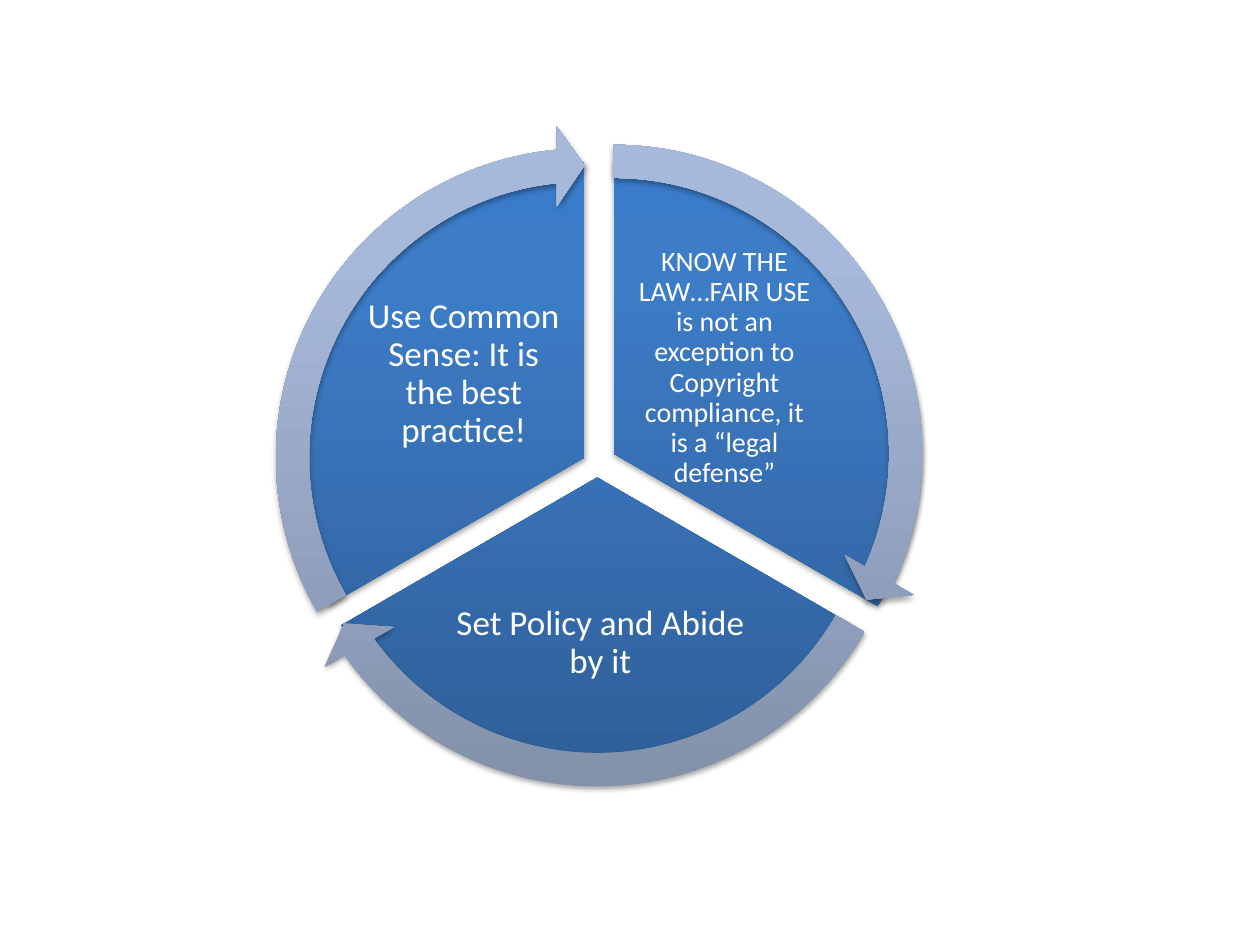
from lxml import etree
from pptx import Presentation
from pptx.dml.color import RGBColor
from pptx.enum.shapes import MSO_SHAPE
from pptx.enum.text import MSO_ANCHOR, PP_ALIGN
from pptx.oxml import parse_xml
from pptx.oxml.ns import nsdecls, qn
from pptx.util import Inches, Pt

PIE, ARROW = MSO_SHAPE.PIE, MSO_SHAPE.CIRCULAR_ARROW
MIDDLE, CENTER = MSO_ANCHOR.MIDDLE, PP_ALIGN.CENTER

COLORS = {
    "text": "FFFFFF",
    "shadow": "000000",
    "pie_dark": "2F5F99", "pie_mid": "3D7CC7", "pie_light": "3A7CCB",
    "arrow_dark": "818FA8", "arrow_mid": "A7B9DA", "arrow_light": "A7BADC",
}
STOPS = {"dark": 0, "mid": 80, "light": 100}
PIE_SIZE, ARROW_SIZE = 4.69, 5.27
ARROW_THICKNESS, ARROW_HEAD_ANGLE, ARROW_HEAD_WIDTH = 0.05, 3.28, 0.06

SECTORS = [
    {"text": "KNOW THE LAW…FAIR USE\vis not an exception to Copyright compliance, it\vis a “legal defense”",
     "size": 16, "inset": 0.02, "box": (5, 2.22, 1.5, 1.4),
     "center": (4.87, 3.6), "pie_width": 4.89,
     "pie_angles": (162, 18), "arrow_angles": (14.73, 161.99)},
    {"text": "Set Policy and Abide by it",
     "size": 20, "inset": 0.03, "box": (3.51, 4.49, 2.51, 1.23),
     "center": (4.74, 3.79), "pie_width": PIE_SIZE,
     "pie_angles": (18, 90), "arrow_angles": (86.72, 18)},
    {"text": "Use Common Sense: It is the best practice!",
     "size": 20, "inset": 0.03, "box": (2.84, 2.27, 1.68, 1.4),
     "center": (4.64, 3.63), "pie_width": PIE_SIZE,
     "pie_angles": (90, 162), "arrow_angles": (158.73, 90)},
]


def style_shape(shape, palette):
    shape.line.fill.background()
    gradient = parse_xml(
        f'<a:gradFill {nsdecls("a")} rotWithShape="1"><a:gsLst/>'
        '<a:lin ang="16200000" scaled="0"/></a:gradFill>')
    for tone, position in STOPS.items():
        stop = etree.SubElement(gradient[0], qn("a:gs"), pos=str(position * 1000))
        etree.SubElement(stop, qn("a:srgbClr"), val=COLORS[f"{palette}_{tone}"])
    effects = parse_xml(
        f'<a:effectLst {nsdecls("a")}><a:outerShdw blurRad="40000" dist="23000" '
        f'dir="5400000" rotWithShape="0"><a:srgbClr val="{COLORS["shadow"]}">'
        '<a:alpha val="35000"/></a:srgbClr></a:outerShdw></a:effectLst>')
    line = shape._element.spPr.find(qn("a:ln"))
    line.addprevious(gradient)
    line.addnext(effects)


def add_round_shape(slide, kind, center, width, height, adjustments, palette):
    left, top = center[0] - width / 2, center[1] - height / 2
    shape = slide.shapes.add_shape(kind, *map(Inches, (left, top, width, height)))
    for index, value in enumerate(adjustments):
        shape.adjustments[index] = value
    style_shape(shape, palette)


def add_text(slide, text, box, size, inset, font="Calibri", color="text"):
    frame = slide.shapes.add_textbox(*map(Inches, box)).text_frame
    frame.word_wrap = True
    frame.vertical_anchor = MIDDLE
    frame.margin_left = frame.margin_right = Inches(inset)
    frame.margin_top = frame.margin_bottom = Inches(inset)
    paragraph = frame.paragraphs[0]
    paragraph.text = text
    paragraph.alignment = CENTER
    paragraph.line_spacing = 0.9
    for run in paragraph.runs:
        run.font.name = font
        run.font.size = Pt(size)
        run.font.color.rgb = RGBColor.from_string(COLORS[color])


def main():
    presentation = Presentation()
    presentation.slide_width, presentation.slide_height = Inches(10), Inches(7.5)
    slide = presentation.slides.add_slide(presentation.slide_layouts[6])
    for sector in SECTORS:
        add_round_shape(slide, PIE, sector["center"], sector["pie_width"], PIE_SIZE,
                        sector["pie_angles"], "pie")
        add_text(slide, sector["text"], sector["box"],
                 size=sector["size"], inset=sector["inset"])
    for sector in SECTORS:
        adjustments = (ARROW_THICKNESS, ARROW_HEAD_ANGLE,
                       *sector["arrow_angles"], ARROW_HEAD_WIDTH)
        add_round_shape(slide, ARROW, sector["center"], ARROW_SIZE, ARROW_SIZE,
                        adjustments, "arrow")
    presentation.save("out.pptx")


if __name__ == "__main__":
    main()
